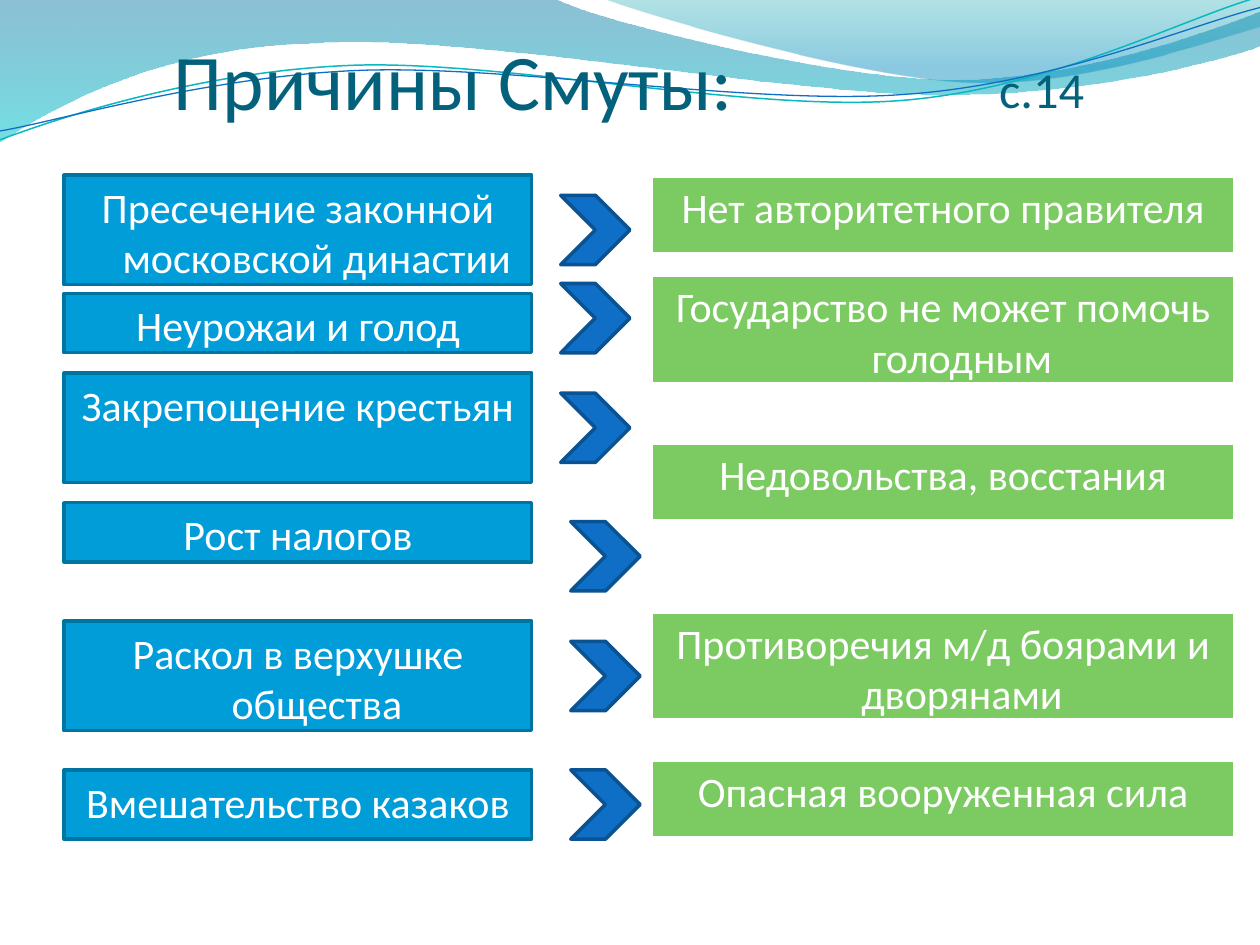
from collections import namedtuple
from dataclasses import dataclass

from lxml import etree
from pptx import Presentation
from pptx.dml.color import RGBColor
from pptx.enum.shapes import MSO_SHAPE
from pptx.enum.text import MSO_ANCHOR, PP_ALIGN
from pptx.oxml.ns import qn
from pptx.util import Inches, Pt

Box = namedtuple("Box", "left top width height")


@dataclass(frozen=True)
class Theme:
    font: str = "Calibri"
    title_size: float = 45
    page_size: float = 28.8
    body_size: float = 24
    title: str = "04617B"
    body: str = "FFFFFF"
    cause: str = "009DD9"
    cause_line: str = "0074A1"
    effect: str = "7CCA62"
    effect_line: str = "FFFFFF"
    arrow: str = "0F6FC6"
    arrow_line: str = "0B5292"
    thin_waves: tuple = (("0AB8BF", 0.85), ("0F6FC6", 0.75))


THEME = Theme()

# Wave outlines: a start point, then straight (2 numbers) or Bézier (6 numbers) pieces
LARGE_WAVE = [(0, 0), (4.4, -0.01), (4.76, 0.17, 6.64, 0.63, 7.58, 0.63),
              (8.53, 0.63, 9.58, 0.26, 10, 0.09), (10.01, 0.36),
              (9.83, 0.44, 8.7, 0.76, 7.46, 0.75), (6.22, 0.75, 3.82, 0.28, 2.57, 0.34),
              (1.29, 0.36, 0.46, 0.83, -0.01, 1.13), (0, 0)]
SMALL_WAVE = [(4.79, -0.01), (5.09, 0.11, 6.82, 0.62, 7.69, 0.65),
              (8.56, 0.69, 9.61, 0.32, 10, 0.21), (10, 0), (4.79, -0.01)]
THIN_WAVES = [
    [(0, 1.11), (0.48, 0.93, 1.58, 0.57, 2.77, 0.52), (3.95, 0.47, 5.93, 0.89, 7.13, 0.8),
     (8.33, 0.71, 9.38, 0.15, 9.98, -0.02)],
    [(0, 1.04), (0.47, 0.96, 1.64, 0.61, 2.83, 0.56), (4.03, 0.51, 5.97, 0.84, 7.17, 0.75),
     (8.36, 0.67, 9.41, 0.21, 10, 0.06)],
]
# Each gradient stop: position, colour, opacity in percent
LARGE_STOPS = [(0, "0074A1", 45), (1, "00C6CF", 55)]
SMALL_STOPS = [(0, "00A1A9", 30), (0.8, "008BBF", 45)]

# Text, top and height of each box
CAUSES = [("Пресечение законной московской династии", 1.39, 0.87),
          ("Неурожаи и голод", 2.33, 0.47), ("Закрепощение крестьян", 2.96, 0.87),
          ("Рост налогов", 3.99, 0.47), ("Раскол в верхушке общества", 4.93, 0.87),
          ("Вмешательство казаков", 6.11, 0.55)]
EFFECTS = [("Нет авторитетного правителя", 1.39, 0.63),
           ("Государство не может помочь голодным", 2.18, 0.87),
           ("Недовольства, восстания", 3.51, 0.63),
           ("Противоречия м/д боярами и дворянами", 4.85, 0.87),
           ("Опасная вооруженная сила", 6.03, 0.63)]
# Shift from the column's left edge, and top
ARROWS = [(0, 1.55), (0, 2.25), (0, 3.12), (0.08, 4.14), (0.08, 5.09), (0.08, 6.11)]


def color(value):
    return RGBColor.from_string(value)


def add_outline(slide, box, outline):
    """Draw lines and true curves inside the frame spanned by the outline."""
    ends = [(box.left + piece[-2], box.top + piece[-1]) for piece in outline]
    xs, ys = zip(*ends)
    left, top = min(xs), min(ys)
    builder = slide.shapes.build_freeform(*map(Inches, ends[0]))
    builder.add_line_segments([tuple(map(Inches, end)) for end in ends[1:]], close=False)
    shape = builder.convert_to_shape()
    shape.shadow.inherit = False
    path = next(shape.element.spPr.iter(qn("a:path")))
    for segment, piece in zip(list(path)[1:], outline[1:]):
        if len(piece) == 2:
            continue
        curve = etree.Element(qn("a:cubicBezTo"))
        for x, y in zip(piece[::2], piece[1::2]):
            etree.SubElement(curve, qn("a:pt"), x=str(int(Inches(box.left + x - left))),
                             y=str(int(Inches(box.top + y - top))))
        path.replace(segment, curve)
    return shape


def fill_gradient(shape, stops):
    shape.fill.gradient()
    shape.fill.gradient_angle = 270
    for stop, (position, value, _) in zip(shape.fill.gradient_stops, stops):
        stop.position = position
        stop.color.rgb = color(value)
    for element, (_, _, opacity) in zip(shape.element.spPr.iter(qn("a:srgbClr")), stops):
        etree.SubElement(element, qn("a:alpha")).set("val", str(opacity * 1000))
    shape.line.fill.background()


def add_waves(slide, box):
    for outline, stops in ((LARGE_WAVE, LARGE_STOPS), (SMALL_WAVE, SMALL_STOPS)):
        fill_gradient(add_outline(slide, box, outline), stops)
    for outline, (value, width) in zip(THIN_WAVES, THEME.thin_waves):
        shape = add_outline(slide, box, outline)
        shape.fill.background()
        shape.line.color.rgb = color(value)
        shape.line.width = Pt(width)


def add_run(paragraph, text, size, value):
    run = paragraph.add_run()
    run.text = text
    run.font.name = THEME.font
    run.font.size = Pt(size)
    run.font.color.rgb = color(value)


def add_heading(slide, box, text, size):
    frame = slide.shapes.add_textbox(*map(Inches, box)).text_frame
    frame.word_wrap = True
    frame.vertical_anchor = MSO_ANCHOR.BOTTOM
    frame.margin_left = frame.margin_right = frame.margin_bottom = 0
    add_run(frame.paragraphs[0], text, size, THEME.title)


def add_title(slide, box):
    # Title and page reference share one baseline
    add_heading(slide, Box(box.left + 0.88, box.top, 6, box.height),
                "Причины Смуты:", THEME.title_size)
    add_heading(slide, Box(box.left + 7.43, box.top, box.width - 7.43, box.height - 0.06),
                "с.14", THEME.page_size)


def add_block(slide, kind, box, fill, line, width):
    shape = slide.shapes.add_shape(kind, *map(Inches, box))
    shape.shadow.inherit = False
    shape.fill.solid()
    shape.fill.fore_color.rgb = color(fill)
    shape.line.color.rgb = color(line)
    shape.line.width = Pt(width)
    return shape


def add_text_column(slide, box, rows, fill, line, width):
    for text, top, height in rows:
        shape = add_block(slide, MSO_SHAPE.RECTANGLE,
                          Box(box.left, box.top + top, box.width, height), fill, line, width)
        frame = shape.text_frame
        frame.word_wrap = True
        frame.vertical_anchor = MSO_ANCHOR.TOP
        paragraph = frame.paragraphs[0]
        paragraph.alignment = PP_ALIGN.CENTER
        properties = paragraph._p.get_or_add_pPr()
        properties.set("marL", str(Inches(0.3)))
        properties.set("indent", str(-Inches(0.3)))
        add_run(paragraph, text, THEME.body_size, THEME.body)


def add_arrow_column(slide, box):
    for shift, top in ARROWS:
        add_block(slide, MSO_SHAPE.CHEVRON,
                  Box(box.left + shift, box.top + top, box.width, box.width),
                  THEME.arrow, THEME.arrow_line, 2)


def main():
    presentation = Presentation()
    presentation.slide_width, presentation.slide_height = Inches(10), Inches(7.5)
    slide = presentation.slides.add_slide(presentation.slide_layouts[6])
    add_waves(slide, Box(0, 0, 10, 1.13))
    add_title(slide, Box(0.5, 0.21, 9, 0.79))
    add_text_column(slide, Box(0.51, 0, 3.71, 7.5), CAUSES, THEME.cause, THEME.cause_line, 2)
    add_arrow_column(slide, Box(4.45, 0, 0.55, 7.5))
    add_text_column(slide, Box(5.16, 0, 4.65, 7.5), EFFECTS, THEME.effect, THEME.effect_line, 3)
    presentation.save("out.pptx")


if __name__ == "__main__":
    main()
